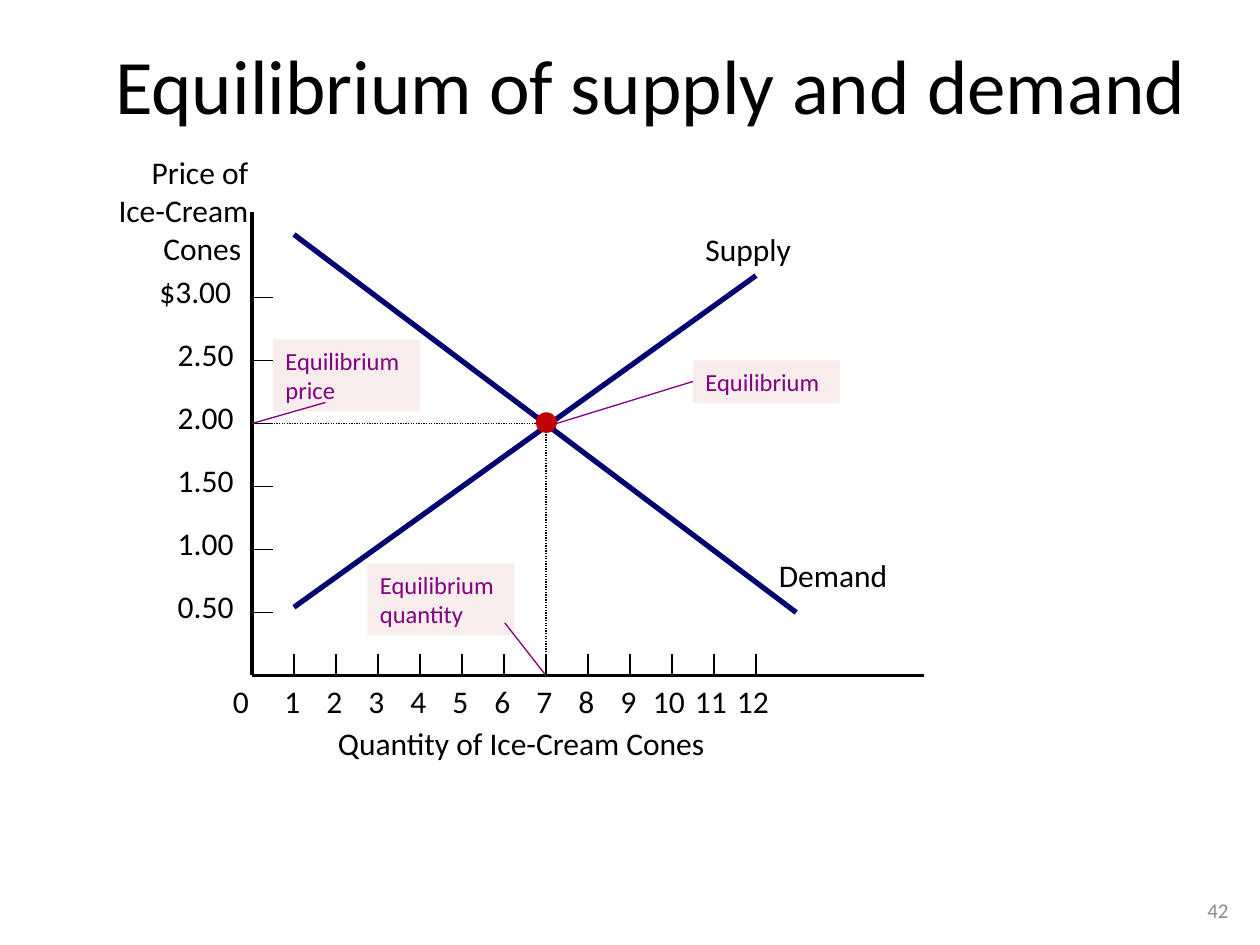
from pptx import Presentation
from pptx.dml.color import RGBColor
from pptx.enum.dml import MSO_LINE_DASH_STYLE as Dash
from pptx.enum.shapes import MSO_CONNECTOR as Connector, MSO_SHAPE as Shape
from pptx.enum.text import MSO_ANCHOR as Anchor, MSO_AUTO_SIZE as AutoSize, PP_ALIGN as Align
from pptx.oxml.ns import qn
from pptx.util import Pt

BLACK, NAVY, PURPLE, PINK, RED, GRAY = "000000", "000070", "800080", "F8EDEC", "C00000", "8C8C8C"
color = RGBColor.from_string

deck = Presentation()
deck.slide_width, deck.slide_height = Pt(720), Pt(540)
page = deck.slides.add_slide(deck.slide_layouts[6])


def add_text(text, left, top, width, height, size=18, ink=BLACK, align=Align.LEFT, fill=None):
    area = [Pt(value) for value in (left, top, width, height)]
    if fill:
        box = page.shapes.add_shape(Shape.RECTANGLE, *area)
        box.shadow.inherit = False
        box.fill.solid()
        box.fill.fore_color.rgb = color(fill)
        box.line.fill.background()
    else:
        box = page.shapes.add_textbox(*area)
    frame = box.text_frame
    frame.text = text
    frame.word_wrap = False
    frame.auto_size = AutoSize.SHAPE_TO_FIT_TEXT
    frame.vertical_anchor = Anchor.TOP
    for para in frame.paragraphs:
        para.alignment = align
        for span in para.runs:
            span.font.name, span.font.size = "Calibri", Pt(size)
            span.font.color.rgb = color(ink)
    return box


def add_line(x1, y1, x2, y2, ink=BLACK, width=0.75, dash=None):
    line = page.shapes.add_connector(Connector.STRAIGHT, Pt(x1), Pt(y1), Pt(x2), Pt(y2))
    line.line.color.rgb = color(ink)
    line.line.width = Pt(width)
    if dash:
        line.line.dash_style = dash
    properties = line._element.spPr
    properties.append(properties.makeelement(qn("a:effectLst"), {}))


# Title and page number
title = add_text("Equilibrium of supply and demand", 24, 18, 696, 78, 44, align=Align.CENTER)
number = add_text("42", 672, 505.5, 48, 29, 12, GRAY, Align.CENTER)
for box in (title, number):
    box.text_frame.auto_size = AutoSize.NONE
    box.text_frame.word_wrap = True
number.text_frame.vertical_anchor = Anchor.MIDDLE

# Plot geometry: one cone is 24 pt across, 50 cents is 36 pt up
origin_x, axis_y = 144, 386
cone_step, price_step = 24, 36
lowest_price_y = 350
equilibrium_x = origin_x + 7 * cone_step
equilibrium_y = lowest_price_y - 3 * price_step

# Supply curve
add_line(168, 347, 432, 157.5, NAVY, 3)
add_text("Supply", 396, 128, 70, 29)

# Quantity axis
add_line(origin_x, axis_y, 528, axis_y, width=2.25)
add_text("0", 126, axis_y, 24.5, 29)
for quantity in range(1, 13):
    x = origin_x + quantity * cone_step
    add_line(x, axis_y - 12, x, axis_y)
    width, offset = (24.5, 12.5) if quantity < 10 else (34.5, 18)
    add_text(str(quantity), x - offset, axis_y, width, 29)
add_text("Quantity of Ice-Cream Cones", 186, 410, 255, 29)

# Price axis
add_line(origin_x, 121, origin_x, axis_y, width=2.25)
for step, price in enumerate(["0.50", "1.00", "1.50", "2.00", "2.50", "$3.00"]):
    y = lowest_price_y - step * price_step
    add_line(origin_x, y, origin_x + 12, y)
    left = 84 if price.startswith("$") else 94.5
    add_text(price, left, y - 18, origin_x - left, 29)
add_text("Price of\n Ice-Cream\nCones ", 44.5, 84, 104.5, 73, align=Align.RIGHT)

# Demand curve
add_line(168, 134, 455, 350, NAVY, 3)
add_text("Demand", 438, 314, 83.5, 29)

# Dotted guides and equilibrium point
add_line(equilibrium_x, axis_y, equilibrium_x, equilibrium_y, dash=Dash.ROUND_DOT)
add_line(equilibrium_x, equilibrium_y, origin_x, equilibrium_y, dash=Dash.ROUND_DOT)
point = page.shapes.add_shape(Shape.OVAL, Pt(306.5), Pt(236), Pt(11.5), Pt(11))
point.shadow.inherit = False
point.fill.solid()
point.fill.fore_color.rgb = color(RED)
point.line.color.rgb = color(RED)
point.line.width = Pt(0.75)

# Callouts: text, box, leader line
callouts = [
    ("Equilibrium", (396, 206, 84, 24.5), (318, equilibrium_y, 396, 218)),
    ("Equilibrium\nprice", (156, 194, 84, 41), (origin_x, equilibrium_y, 186, 230)),
    ("Equilibrium\nquantity", (210, 322, 84, 41), (288.5, 356, equilibrium_x, axis_y)),
]
for text, area, leader in callouts:
    add_text(text, *area, size=14, ink=PURPLE, fill=PINK)
    add_line(*leader, ink=PURPLE)

deck.save("out.pptx")
